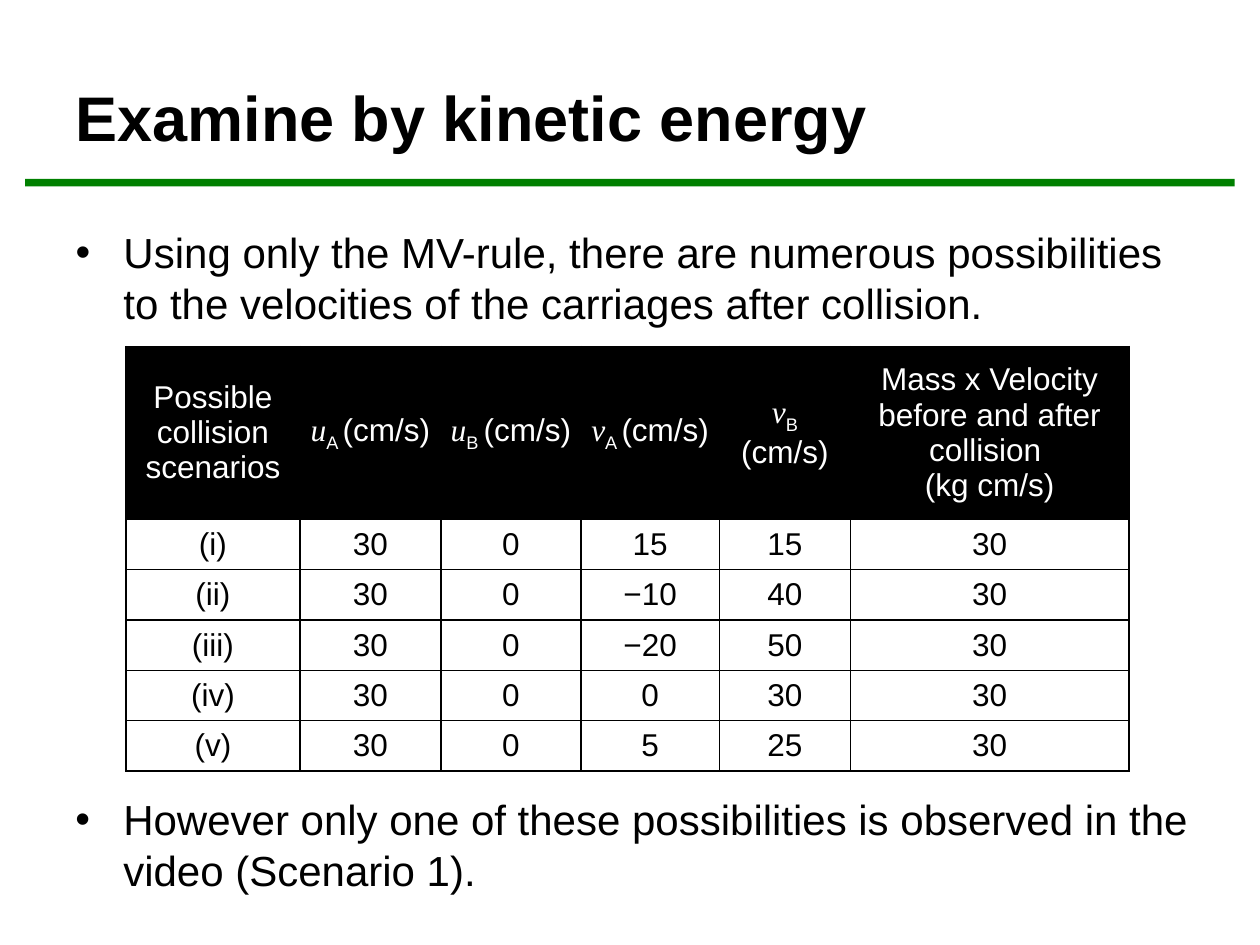
from lxml.etree import SubElement as Sub
from pptx import Presentation
from pptx.dml.color import RGBColor
from pptx.enum.shapes import MSO_SHAPE as Shape
from pptx.enum.text import MSO_ANCHOR as Anchor, MSO_AUTO_SIZE as Fit, PP_ALIGN as Align
from pptx.oxml.ns import qn
from pptx.util import Inches, Pt

BLACK = RGBColor(0, 0, 0)
WHITE = RGBColor(255, 255, 255)
GREEN = RGBColor(0, 128, 0)

COLS = [1.38, 1.12, 1.11, 1.1, 1.04, 2.21]
ROWS = [1.37] + [0.4] * 5
HEAD = ["Possible collision scenarios", ("u", "A "), ("u", "B "), ("v", "A "), ("v", "B "),
        "Mass x Velocity before and after collision \n(kg cm/s)"]
DATA = [
    ["(i)", "30", "0", "15", "15", "30"],
    ["(ii)", "30", "0", "−10", "40", "30"],
    ["(iii)", "30", "0", "−20", "50", "30"],
    ["(iv)", "30", "0", "0", "30", "30"],
    ["(v)", "30", "0", "5", "25", "30"],
]


def place(item, box):
    item.left, item.top, item.width, item.height = [Inches(n) for n in box]


def style(para, size, color, bold=False):
    for run in para.runs:
        font = run.font
        font.name, font.size, font.bold = "Arial", Pt(size), bold
        font.color.rgb = color


def add_bar(slide, box):
    bar = slide.shapes.add_shape(Shape.RECTANGLE, *[Inches(n) for n in box])
    bar.shadow.inherit = False
    bar.fill.solid()
    bar.fill.fore_color.rgb = GREEN
    bar.line.fill.background()


def set_title(title, box, text):
    place(title, box)
    frame = title.text_frame
    frame.text = text
    frame.vertical_anchor = Anchor.MIDDLE
    frame.auto_size = Fit.NONE
    para = frame.paragraphs[0]
    para.alignment = Align.LEFT
    style(para, 36, BLACK, True)


def set_point(item, box, text):
    place(item, box)
    frame = item.text_frame
    frame.text = text
    frame.word_wrap = True
    frame.auto_size = Fit.NONE
    para = frame.paragraphs[0]
    para.space_before = Pt(0)
    props = para._p.get_or_add_pPr()
    props.set("marL", str(Inches(0.38)))
    props.set("indent", str(Inches(-0.38)))
    Sub(props, qn("a:buFont"), typeface="Arial")
    Sub(props, qn("a:buChar"), char="•")
    style(para, 24, BLACK)


def add_edges(cell):
    props = cell._tc.get_or_add_tcPr()
    for side in ("lnL", "lnR", "lnT", "lnB"):
        edge = Sub(props, qn("a:" + side), w=str(Pt(1)))
        fill = Sub(edge, qn("a:solidFill"))
        Sub(fill, qn("a:srgbClr"), val=str(BLACK))


def set_cell(cell, text, head):
    cell.margin_left = cell.margin_right = Inches(0.07)
    cell.margin_top = cell.margin_bottom = 0
    cell.vertical_anchor = Anchor.MIDDLE
    add_edges(cell)
    if head:
        cell.fill.solid()
        cell.fill.fore_color.rgb = BLACK
    else:
        cell.fill.background()
    para = cell.text_frame.paragraphs[0]
    para.alignment = Align.CENTER
    if isinstance(text, str):
        para.text = text
    else:
        for part in (*text, "(cm/s)"):
            para.add_run().text = part
    style(para, 18, WHITE if head else BLACK)
    if not isinstance(text, str):
        name, sub, unit = para.runs
        name.font.name, name.font.italic = "Times New Roman", True
        sub.font._element.set("baseline", "-25000")


def add_grid(slide, box):
    grid = slide.shapes.add_table(len(ROWS), len(COLS), *[Inches(n) for n in box]).table
    grid.horz_banding = False
    for col, width in zip(grid.columns, COLS):
        col.width = Inches(width)
    for row, height in zip(grid.rows, ROWS):
        row.height = Inches(height)
    for r, texts in enumerate([HEAD] + DATA):
        for c, text in enumerate(texts):
            set_cell(grid.cell(r, c), text, r == 0)


def main():
    deck = Presentation()
    deck.slide_width, deck.slide_height = Inches(10), Inches(7.5)
    slide = deck.slides.add_slide(deck.slide_layouts[1])
    add_bar(slide, (0.2, 1.42, 9.6, 0.06))
    set_title(slide.shapes.title, (0.5, 0.3, 9, 1.25), "Examine by kinetic energy")
    set_point(slide.placeholders[1], (0.5, 1.75, 9.04, 0.88),
              "Using only the MV-rule, there are numerous possibilities "
              "to the velocities of the carriages after collision.")
    add_grid(slide, (1, 2.75, sum(COLS), sum(ROWS)))
    set_point(slide.shapes.add_textbox(0, 0, 0, 0), (0.5, 6.25, 9.12, 0.91),
              "However only one of these possibilities is observed in the "
              "video (Scenario 1).")
    deck.save("out.pptx")


if __name__ == "__main__":
    main()
